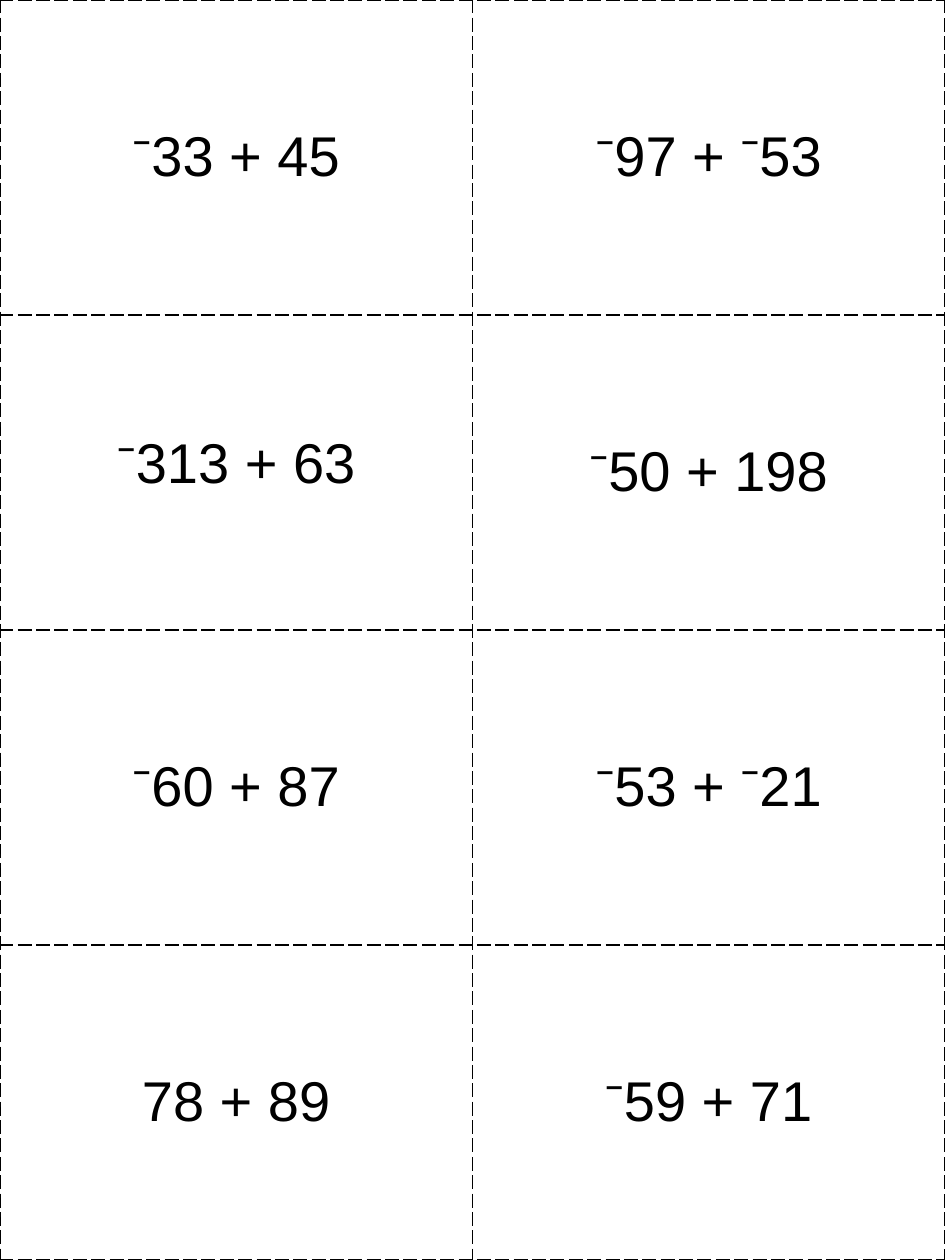
from lxml.etree import SubElement
from pptx import Presentation
from pptx.dml.color import RGBColor
from pptx.enum.text import MSO_ANCHOR, PP_ALIGN
from pptx.oxml.ns import qn
from pptx.util import Inches, Pt

SUMS = [
    ["⁻33 + 45", "⁻97 + ⁻53"],
    ["⁻313 + 63", "⁻50 + 198"],
    ["⁻60 + 87", "⁻53 + ⁻21"],
    ["78 + 89", "⁻59 + 71"],
]
RAISED_SUM = "⁻313 + 63"  # sits slightly above the middle of its card
INK, PAPER = "000000", "FFFFFF"
SUM_FONT = {"name": "Arial", "size": Pt(32), "bold": False}


def colour(hex_value):
    return RGBColor.from_string(hex_value)


def add_cut_lines(card):
    """Dash all four sides of a card; borders must precede the fill."""
    properties = card._tc.get_or_add_tcPr()
    for position, side in enumerate(("lnL", "lnR", "lnT", "lnB")):
        line = SubElement(properties, qn(f"a:{side}"), w=str(Pt(1)))
        fill = SubElement(line, qn("a:solidFill"))
        SubElement(fill, qn("a:srgbClr"), val=INK)
        SubElement(line, qn("a:prstDash"), val="lgDash")
        properties.insert(position, line)


def fill_card(card, sum_text):
    card.fill.solid()
    card.fill.fore_color.rgb = colour(PAPER)
    add_cut_lines(card)
    card.vertical_anchor = MSO_ANCHOR.MIDDLE
    if sum_text == RAISED_SUM:
        card.margin_bottom = Inches(0.18)

    paragraph = card.text_frame.paragraphs[0]
    paragraph.alignment = PP_ALIGN.CENTER
    run = paragraph.add_run()
    run.text = sum_text
    for attribute, value in SUM_FONT.items():
        setattr(run.font, attribute, value)
    run.font.color.rgb = colour(INK)


def add_card_sheet(slide, left, top, width, height):
    """Divide the box evenly into one card for each sum."""
    sheet = slide.shapes.add_table(
        len(SUMS), len(SUMS[0]), left, top, width, height
    ).table
    sheet.first_row = False
    sheet.horz_banding = False
    for row, sums in enumerate(SUMS):
        for column, sum_text in enumerate(sums):
            fill_card(sheet.cell(row, column), sum_text)


def main():
    deck = Presentation()
    deck.slide_width, deck.slide_height = Inches(7.5), Inches(10)
    slide = deck.slides.add_slide(deck.slide_layouts[6])

    # Cards to cut out, covering the whole page
    add_card_sheet(slide, Inches(0), Inches(0), deck.slide_width, deck.slide_height)
    deck.save("out.pptx")


if __name__ == "__main__":
    main()
